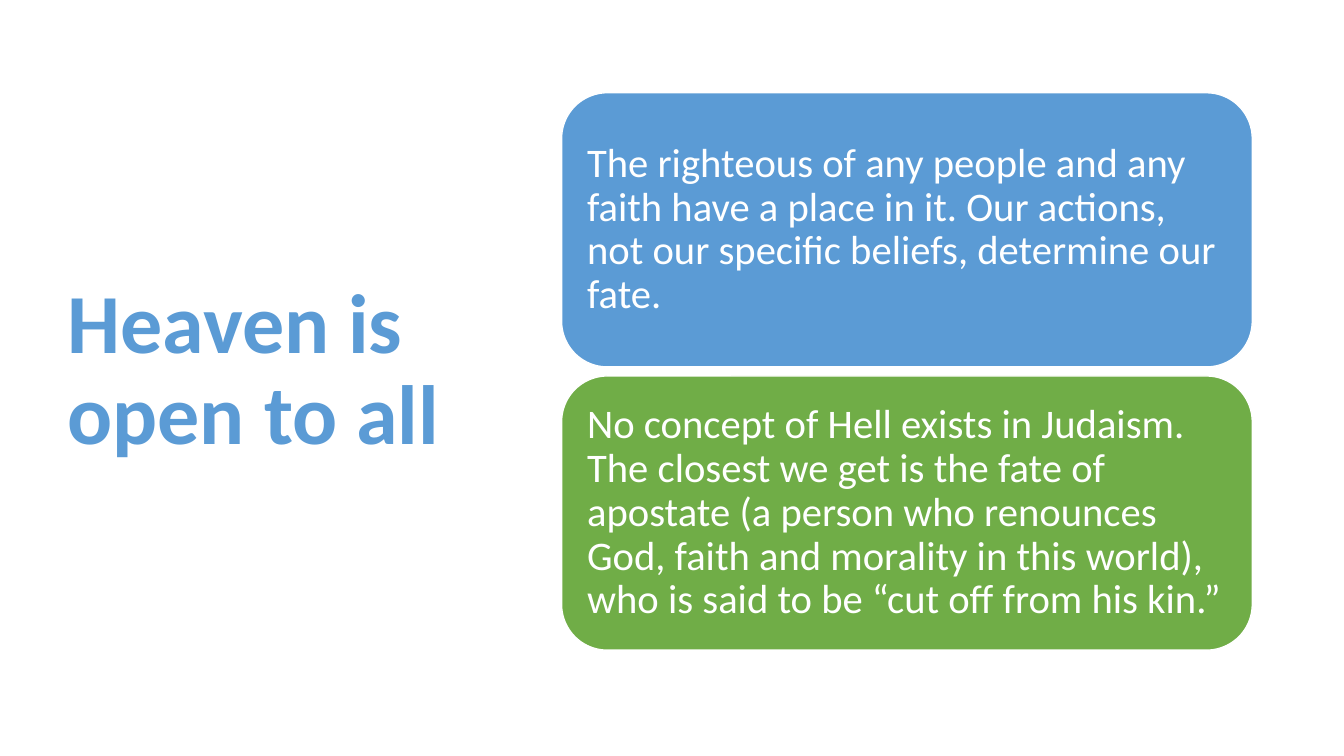
"""Build the slide "Heaven is open to all" with two rounded text panels."""
from pptx import Presentation
from pptx import util as u
from pptx.dml.color import RGBColor
from pptx.enum import shapes, text

COLOURS = {"blue": "5B9BD5", "green": "70AD47", "white": "FFFFFF"}
PANELS = [
    ("The righteous of any people and any faith have a place in it. "
     "Our actions, not our specific beliefs, determine our fate.", "blue"),
    ("No concept of Hell exists in Judaism. The closest we get is the fate of "
     "apostate (a person who renounces God, faith and morality in this world), "
     "who is said to be “cut off from his kin.”", "green"),
]
PANEL_TOP, PANEL_HEIGHT, PANEL_GAP = 0.92, 2.72, 0.09


def write_text(shape, wording, *, size, colour, bold=False, inset=0.1):
    frame = shape.text_frame
    frame.word_wrap = True
    frame.auto_size = text.MSO_AUTO_SIZE.NONE
    frame.vertical_anchor = text.MSO_ANCHOR.MIDDLE
    frame.margin_left = frame.margin_right = u.Inches(inset)
    frame.margin_top = frame.margin_bottom = u.Inches(inset)
    paragraph = frame.paragraphs[0]
    paragraph.alignment = text.PP_ALIGN.LEFT
    paragraph.line_spacing = 0.9
    run = paragraph.add_run()
    run.text = wording
    run.font.name = "Calibri"
    run.font.size = u.Pt(size)
    run.font.bold = bold
    run.font.color.rgb = RGBColor.from_string(COLOURS[colour])


presentation = Presentation()
presentation.slide_width = u.Inches(13.33)
presentation.slide_height = u.Inches(7.5)
slide = presentation.slides.add_slide(presentation.slide_layouts[5])

title = slide.shapes.title
title.left, title.top = u.Inches(0.57), u.Inches(0.68)
title.width, title.height = u.Inches(4.16), u.Inches(6.02)
write_text(title, "Heaven is open to all", size=60, colour="blue", bold=True)

for index, (wording, colour) in enumerate(PANELS):
    top = PANEL_TOP + index * (PANEL_HEIGHT + PANEL_GAP)
    panel = slide.shapes.add_shape(
        shapes.MSO_SHAPE.ROUNDED_RECTANGLE,
        u.Inches(5.57), u.Inches(top), u.Inches(6.85), u.Inches(PANEL_HEIGHT))
    panel.shadow.inherit = False
    panel.fill.solid()
    panel.fill.fore_color.rgb = RGBColor.from_string(COLOURS[colour])
    panel.line.color.rgb = RGBColor.from_string(COLOURS["white"])
    panel.line.width = u.Pt(1)
    write_text(panel, wording, size=29, colour="white", inset=0.12)

presentation.save("out.pptx")
